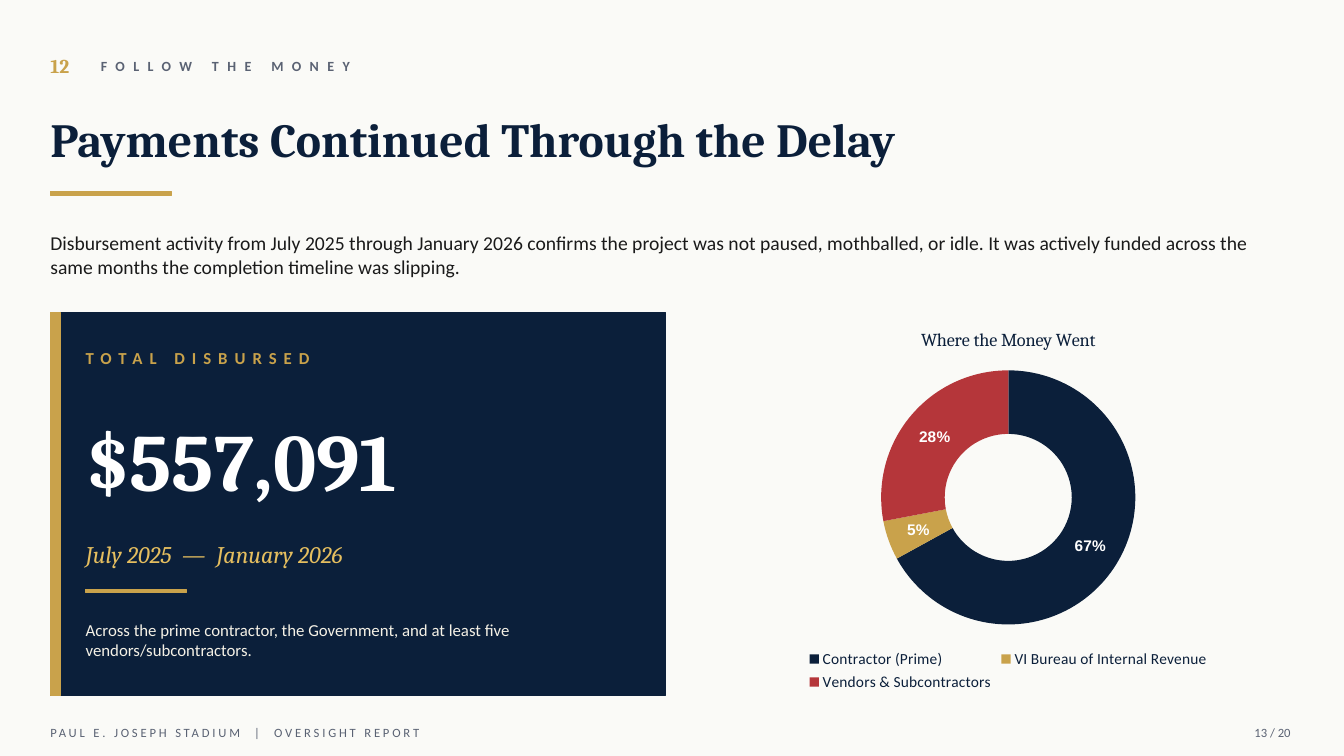
from pptx import Presentation
from pptx.chart.data import CategoryChartData
from pptx.dml.color import RGBColor
from pptx.enum.chart import XL_CHART_TYPE, XL_LEGEND_POSITION
from pptx.enum.shapes import MSO_SHAPE
from pptx.enum.text import MSO_ANCHOR, PP_ALIGN
from pptx.util import Inches, Pt

DOUGHNUT = XL_CHART_TYPE.DOUGHNUT
BOTTOM = XL_LEGEND_POSITION.BOTTOM
RECTANGLE = MSO_SHAPE.RECTANGLE
MIDDLE = MSO_ANCHOR.MIDDLE
LEFT, RIGHT = PP_ALIGN.LEFT, PP_ALIGN.RIGHT

IVORY = RGBColor(0xFA, 0xFA, 0xF7)
NAVY = RGBColor(0x0B, 0x1F, 0x3A)
GOLD = RGBColor(0xC9, 0xA2, 0x4B)
LIGHT_GOLD = RGBColor(0xE5, 0xBE, 0x5F)
RED = RGBColor(0xB5, 0x36, 0x3A)
SLATE = RGBColor(0x5A, 0x62, 0x73)
INK = RGBColor(0x1A, 0x1A, 0x1A)
CREAM = RGBColor(0xF5, 0xF1, 0xE6)
WHITE = RGBColor(0xFF, 0xFF, 0xFF)

SERIF, SANS, LABEL_FACE = "Cambria", "Calibri", "Arial"
MARGIN = 0.5
PANEL_TOP, PANEL_HEIGHT = 3.1, 3.8
PANEL_TEXT_LEFT = 0.85
FOOTER_TOP = 7.12


def style_font(font, size, color, face=SANS, bold=False, italic=False):
    font.size = Pt(size)
    font.name = face
    font.bold = bold
    font.italic = italic
    font.color.rgb = color


class ReportSlide:
    def __init__(self, presentation):
        self.slide = presentation.slides.add_slide(presentation.slide_layouts[6])
        background = self.slide.background.fill
        background.solid()
        background.fore_color.rgb = IVORY

    def text(self, content, left, top, width, height, *, align=LEFT, spacing=0, **style):
        box = self.slide.shapes.add_textbox(
            Inches(left), Inches(top), Inches(width), Inches(height))
        frame = box.text_frame
        frame.word_wrap = True
        frame.vertical_anchor = MIDDLE
        frame.margin_left = frame.margin_right = 0
        frame.margin_top = frame.margin_bottom = 0
        paragraph = frame.paragraphs[0]
        paragraph.alignment = align
        run = paragraph.add_run()
        run.text = content
        style_font(run.font, **style)
        if spacing:
            run._r.get_or_add_rPr().set("spc", str(spacing * 100))

    def bar(self, left, top, width, height, color):
        bar = self.slide.shapes.add_shape(
            RECTANGLE, Inches(left), Inches(top), Inches(width), Inches(height))
        bar.shadow.inherit = False
        bar.fill.solid()
        bar.fill.fore_color.rgb = color
        bar.line.color.rgb = color
        bar.line.width = Pt(1)

    def doughnut(self, title, shares, left, top, width, height):
        data = CategoryChartData(number_format="0")
        data.categories = [recipient for recipient, _, _ in shares]
        data.add_series("Series 1", [share for _, share, _ in shares])
        chart = self.slide.shapes.add_chart(
            DOUGHNUT, Inches(left), Inches(top), Inches(width), Inches(height), data).chart
        style_font(chart.font, 10, NAVY)

        chart.has_title = True
        heading = chart.chart_title.text_frame
        heading.text = title
        style_font(heading.paragraphs[0].runs[0].font, 13, NAVY, SERIF)
        chart.chart_title.include_in_layout = False

        chart.has_legend = True
        chart.legend.position = BOTTOM
        chart.legend.include_in_layout = False
        style_font(chart.legend.font, 11, NAVY)

        plot = chart.plots[0]
        plot.vary_by_categories = True
        for hole in plot._element.xpath("c:holeSize"):
            hole.set("val", "55")
        for index, (_, _, color) in enumerate(shares):
            fill = plot.series[0].points[index].format.fill
            fill.solid()
            fill.fore_color.rgb = color

        plot.has_data_labels = True
        labels = plot.data_labels
        labels.show_percentage = True
        labels.show_value = False
        labels.show_category_name = False
        labels.number_format = "0%"
        labels.number_format_is_linked = False
        style_font(labels.font, 11, WHITE, LABEL_FACE, bold=True)


def main():
    presentation = Presentation()
    presentation.slide_width = Inches(13.33)
    presentation.slide_height = Inches(7.5)
    report = ReportSlide(presentation)

    report.text("12", MARGIN, 0.45, 0.6, 0.4, size=14, color=GOLD, face=SERIF, bold=True)
    report.text("FOLLOW THE MONEY", 1, 0.5, 6, 0.3,
                size=10, color=SLATE, bold=True, spacing=6)
    report.text("Payments Continued Through the Delay", MARGIN, 0.95, 12, 0.85,
                size=34, color=NAVY, face=SERIF, bold=True)
    report.bar(MARGIN, 1.9, 1.2, 0.04, GOLD)
    report.text("Disbursement activity from July 2025 through January 2026 confirms the "
                "project was not paused, mothballed, or idle. It was actively funded across "
                "the same months the completion timeline was slipping.",
                MARGIN, 2.1, 12.3, 0.85, size=14, color=INK)

    report.bar(MARGIN, PANEL_TOP, 6.1, PANEL_HEIGHT, NAVY)
    report.bar(MARGIN, PANEL_TOP, 0.1, PANEL_HEIGHT, GOLD)
    report.text("TOTAL DISBURSED", PANEL_TEXT_LEFT, 3.35, 5.7, 0.4,
                size=12, color=GOLD, bold=True, spacing=5)
    report.text("$557,091", PANEL_TEXT_LEFT, 3.9, 5.7, 1.3,
                size=58, color=WHITE, face=SERIF, bold=True)
    report.text("July 2025  —  January 2026", PANEL_TEXT_LEFT, 5.3, 5.7, 0.4,
                size=17, color=LIGHT_GOLD, face=SERIF, italic=True)
    report.bar(PANEL_TEXT_LEFT, 5.85, 1, 0.03, GOLD)
    report.text("Across the prime contractor, the Government, and at least five "
                "vendors/subcontractors.",
                PANEL_TEXT_LEFT, 5.95, 5.6, 0.8, size=12, color=CREAM)

    shares = [
        ("Contractor (Prime)", 67, NAVY),
        ("VI Bureau of Internal Revenue", 5, GOLD),
        ("Vendors & Subcontractors", 28, RED),
    ]
    report.doughnut("Where the Money Went", shares, 7, PANEL_TOP, 6, PANEL_HEIGHT)

    report.text("PAUL E. JOSEPH STADIUM  |  OVERSIGHT REPORT", MARGIN, FOOTER_TOP, 8, 0.3,
                size=9, color=SLATE, spacing=2)
    report.text("13 / 20", 11.8, FOOTER_TOP, 1, 0.3, size=9, color=SLATE, align=RIGHT)

    presentation.save("out.pptx")


if __name__ == "__main__":
    main()
